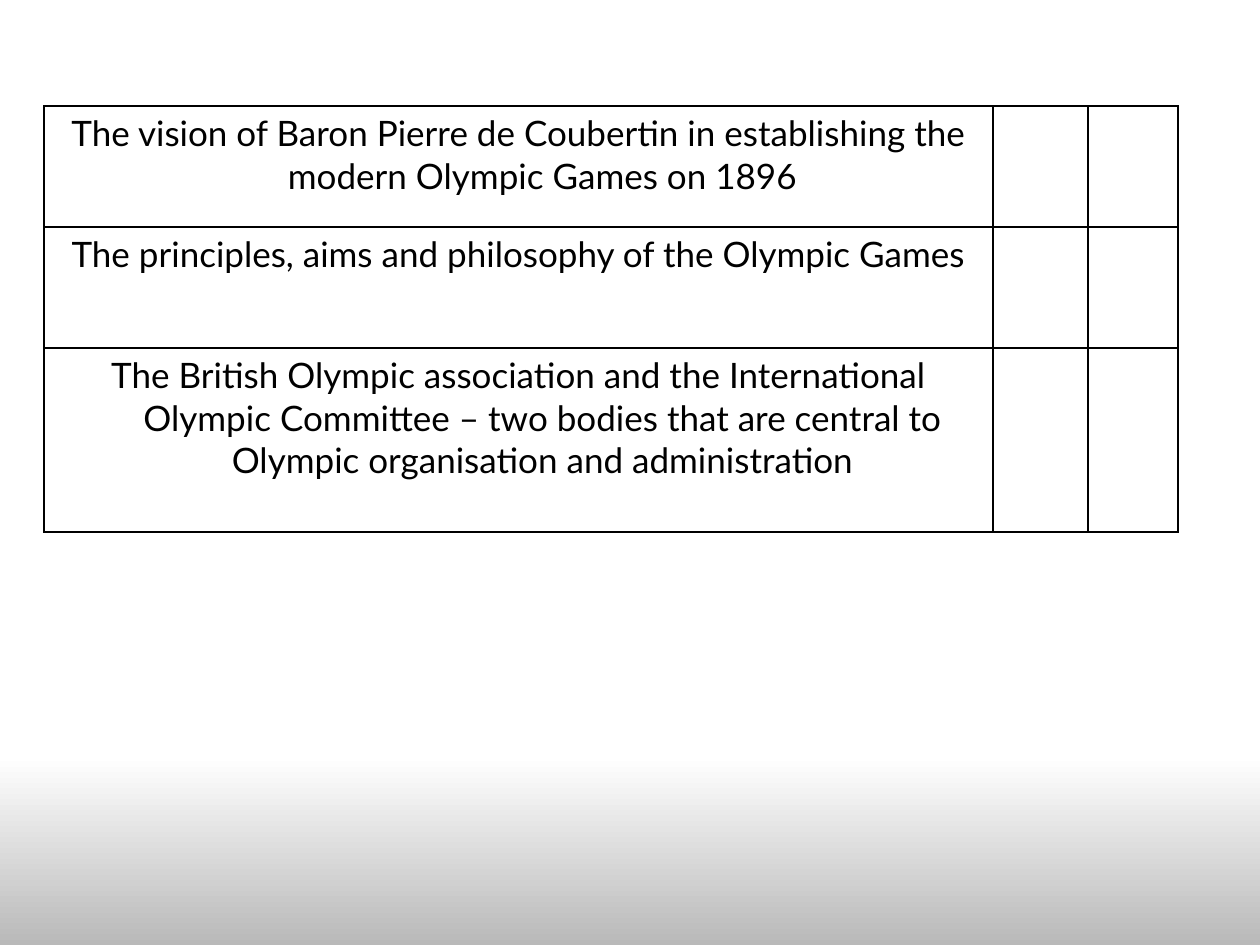
"""Build a slide with a three-row checklist table on Olympic topics."""
from lxml.etree import SubElement
from pptx import Presentation
from pptx.dml.color import RGBColor
from pptx.enum.text import PP_ALIGN
from pptx.oxml.ns import qn
from pptx.util import Pt

PX = 914400 / 126
COLORS = {"text": "000000", "border": "000000", "top": "FFFFFF", "bottom": "B9B9B9"}
COLS = [949, 95, 90]
ROWS = [121, 121, 184]
TOPICS = [
    "The vision of Baron Pierre de Coubertin in establishing the modern Olympic Games on 1896",
    "The principles, aims and philosophy of the Olympic Games",
    "The British Olympic association and the International Olympic Committee – "
    "two bodies that are central to Olympic organisation and administration",
]


def px(n):
    return round(n * PX)


def add_borders(cell):
    tcPr = cell._tc.get_or_add_tcPr()
    for i, side in enumerate(("a:lnL", "a:lnR", "a:lnT", "a:lnB")):
        ln = SubElement(tcPr, qn(side), w=str(Pt(1)))
        fill = SubElement(ln, qn("a:solidFill"))
        SubElement(fill, qn("a:srgbClr"), val=COLORS["border"])
        tcPr.remove(ln)
        tcPr.insert(i, ln)


prs = Presentation()
prs.slide_width, prs.slide_height = px(1260), px(945)
s = prs.slides.add_slide(prs.slide_layouts[6])

bg = s.background.fill
bg.gradient()
bg.gradient_angle = 270
for stop, position, name in zip(bg.gradient_stops, (0.8, 1), ("top", "bottom")):
    stop.position = position
    stop.color.rgb = RGBColor.from_string(COLORS[name])

table = s.shapes.add_table(
    len(ROWS), len(COLS), px(44), px(106), px(sum(COLS)), px(sum(ROWS))
).table
table.first_row = False
table.horz_banding = False
for column, width in zip(table.columns, COLS):
    column.width = px(width)
for row, height in zip(table.rows, ROWS):
    row.height = px(height)

for cell in table.iter_cells():
    cell.fill.background()
    add_borders(cell)

for i, topic in enumerate(TOPICS):
    p = table.cell(i, 0).text_frame.paragraphs[0]
    p.text = topic
    p.alignment = PP_ALIGN.CENTER
    pPr = p._p.get_or_add_pPr()
    pPr.set("marL", str(px(48)))
    pPr.set("indent", str(px(-48)))
    p.font.name = "Lato"
    p.font.size = Pt(20)
    p.font.color.rgb = RGBColor.from_string(COLORS["text"])

prs.save("out.pptx")
